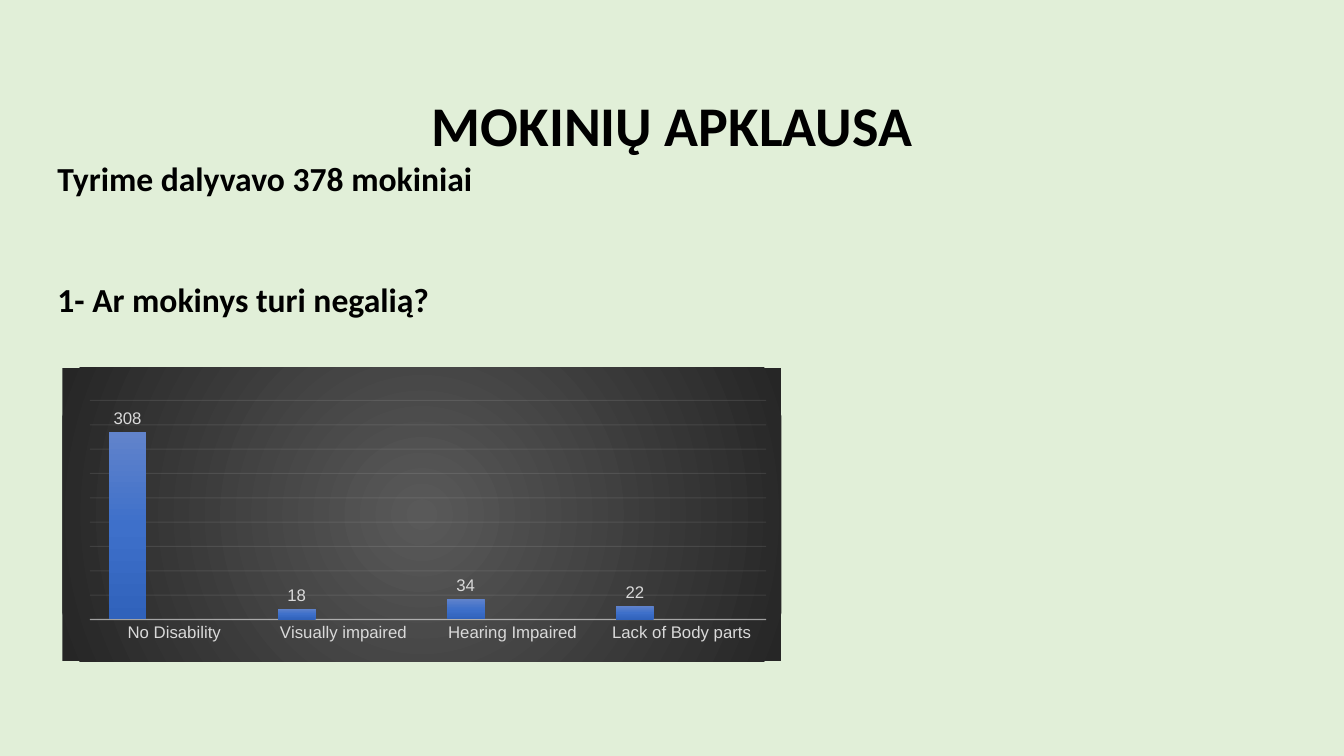
import pptx
import pptx.chart.data
import pptx.dml.color
import pptx.enum.chart
import pptx.enum.text
import pptx.oxml
import pptx.oxml.ns
import pptx.util

Pt = pptx.util.Pt
qn = pptx.oxml.ns.qn
xl = pptx.enum.chart
ALIGN = pptx.enum.text.PP_ALIGN

WIDE, HIGH = pptx.util.Inches(13.33), pptx.util.Inches(7.5)
COLOR = {
    "page": "E1EFD8", "ink": "000000", "label": "D9D9D9", "line": "F2F2F2",
    "glow": "595959", "edge": "262626",
}
# Gradient stops of each series, from top to bottom
SHADES = [
    ["6183CB", "3E70CA", "3062BB"],
    ["F18C57", "F67B28", "E56C19"],
    ["AFAFAF", "A5A5A5", "939393"],
]
GROUPS = ["No Disability", "Visually impaired", "Hearing Impaired", "Lack of Body parts"]
COUNTS = [154, 9, 17, 11]
LABELS = ["308", "18", "34", "22"]


def rgb(code):
    return pptx.dml.color.RGBColor.from_string(code)


def place(left, top, width, height):
    """Turn percentages of the slide into lengths."""
    return [int(share * side / 100)
            for share, side in zip((left, top, width, height), (WIDE, HIGH) * 2)]


def style(font, size, color, face, bold=False):
    font.size, font.name, font.bold = Pt(size), face, bold
    font.color.rgb = rgb(color)


def write(par, text, size=24, color=COLOR["ink"], face="Calibri", bold=True,
          align=ALIGN.LEFT, before=0):
    par.alignment, par.space_before = align, Pt(before)
    run = par.add_run()
    run.text = text
    style(run.font, size, color, face, bold)


def blend(part, stops, shape):
    """Put a gradient with even stops into a part's spPr."""
    step = 100000 // (len(stops) - 1)
    marks = "".join(f'<a:gs pos="{i * step}"><a:srgbClr val="{code}"/></a:gs>'
                    for i, code in enumerate(stops))
    part.insert(0, pptx.oxml.parse_xml(
        f'<a:gradFill {pptx.oxml.ns.nsdecls("a")} rotWithShape="1">'
        f'<a:gsLst>{marks}</a:gsLst>{shape}</a:gradFill>'))


def rule(form, width, clear):
    """Draw a pale line with the given opacity in percent."""
    form.line.width = Pt(width)
    form.line.color.rgb = rgb(COLOR["line"])
    tint = form.element.get_or_add_spPr().find(".//" + qn("a:srgbClr"))
    tint.append(pptx.oxml.parse_xml(
        f'<a:alpha {pptx.oxml.ns.nsdecls("a")} val="{clear * 1000}"/>'))


def set_plot(chart, left, top, width, height):
    """Fix the inner plot area, in percent of the chart."""
    area = chart.element.find(".//" + qn("c:plotArea"))
    for old in area.findall(qn("c:layout")):
        area.remove(old)
    sides = zip("xywh", (left, top, width, height))
    spots = "".join(f'<c:{key} val="{val / 100}"/>' for key, val in sides)
    area.insert(0, pptx.oxml.parse_xml(
        f'<c:layout {pptx.oxml.ns.nsdecls("c")}><c:manualLayout>'
        '<c:layoutTarget val="inner"/><c:xMode val="edge"/><c:yMode val="edge"/>'
        f'{spots}</c:manualLayout></c:layout>'))


def add_text(slide):
    box = slide.shapes.add_textbox(*place(3.53, 11.33, 92.95, 37.2))
    frame = box.text_frame
    frame.word_wrap = True
    write(frame.paragraphs[0], "MOKINIŲ APKLAUSA", size=40, align=ALIGN.CENTER)
    write(frame.add_paragraph(), "Tyrime dalyvavo 378 mokiniai")
    write(frame.add_paragraph(), "1- Ar mokinys turi negalią?", before=58)


def add_bars(slide):
    data = pptx.chart.data.CategoryChartData()
    data.categories = GROUPS
    blank = [None] * len(GROUPS)
    for num, vals in enumerate((COUNTS, blank, blank), 1):
        data.add_series(f"Series {num}", vals)
    chart = slide.shapes.add_chart(
        xl.XL_CHART_TYPE.COLUMN_CLUSTERED, *place(4.65, 48.67, 53.49, 38.8), data).chart
    chart.has_title = chart.has_legend = False
    style(chart.font, 10, COLOR["ink"], "Arial")

    # Dark backdrop and plot area
    back = pptx.oxml.parse_xml(
        f'<c:spPr {pptx.oxml.ns.nsdecls("c", "a")}><a:ln><a:noFill/></a:ln></c:spPr>')
    chart.element.find(qn("c:chart")).addnext(back)
    blend(back, [COLOR["glow"], COLOR["edge"]],
          '<a:path path="circle"><a:fillToRect l="50000" t="50000" r="50000" b="50000"/></a:path>')
    set_plot(chart, 3.8, 11.1, 94.1, 74.7)

    # Axes
    base, scale = chart.category_axis, chart.value_axis
    base.major_tick_mark = base.minor_tick_mark = xl.XL_TICK_MARK.NONE
    style(base.tick_labels.font, 12, COLOR["label"], "Arial")
    rule(base.format, 1, 54)
    scale.visible = False
    scale.minimum_scale, scale.maximum_scale, scale.major_unit = 0, 180, 20
    rule(scale.major_gridlines.format, 0.75, 10)

    # Bars and their labels
    plot = chart.plots[0]
    plot.gap_width, plot.overlap, plot.vary_by_categories = 100, -24, False
    spot = xl.XL_LABEL_POSITION.OUTSIDE_END
    for bars, stops in zip(plot.series, SHADES):
        bars.format.line.fill.background()
        blend(bars.format.element.get_or_add_spPr(), stops, '<a:lin ang="5400000" scaled="0"/>')
        tags = bars.data_labels
        tags.show_value, tags.position = True, spot
        style(tags.font, 12, COLOR["label"], "Arial")
    for num, text in enumerate(LABELS):
        tag = plot.series[0].points[num].data_label
        write(tag.text_frame.paragraphs[0], text, size=12, color=COLOR["label"],
              face="Arial", bold=False, align=ALIGN.CENTER)
        tag.position = spot


def main():
    deck = pptx.Presentation()
    deck.slide_width, deck.slide_height = WIDE, HIGH
    slide = deck.slides.add_slide(deck.slide_layouts[6])
    slide.background.fill.solid()
    slide.background.fill.fore_color.rgb = rgb(COLOR["page"])
    add_text(slide)
    add_bars(slide)
    deck.save("out.pptx")


if __name__ == "__main__":
    main()
